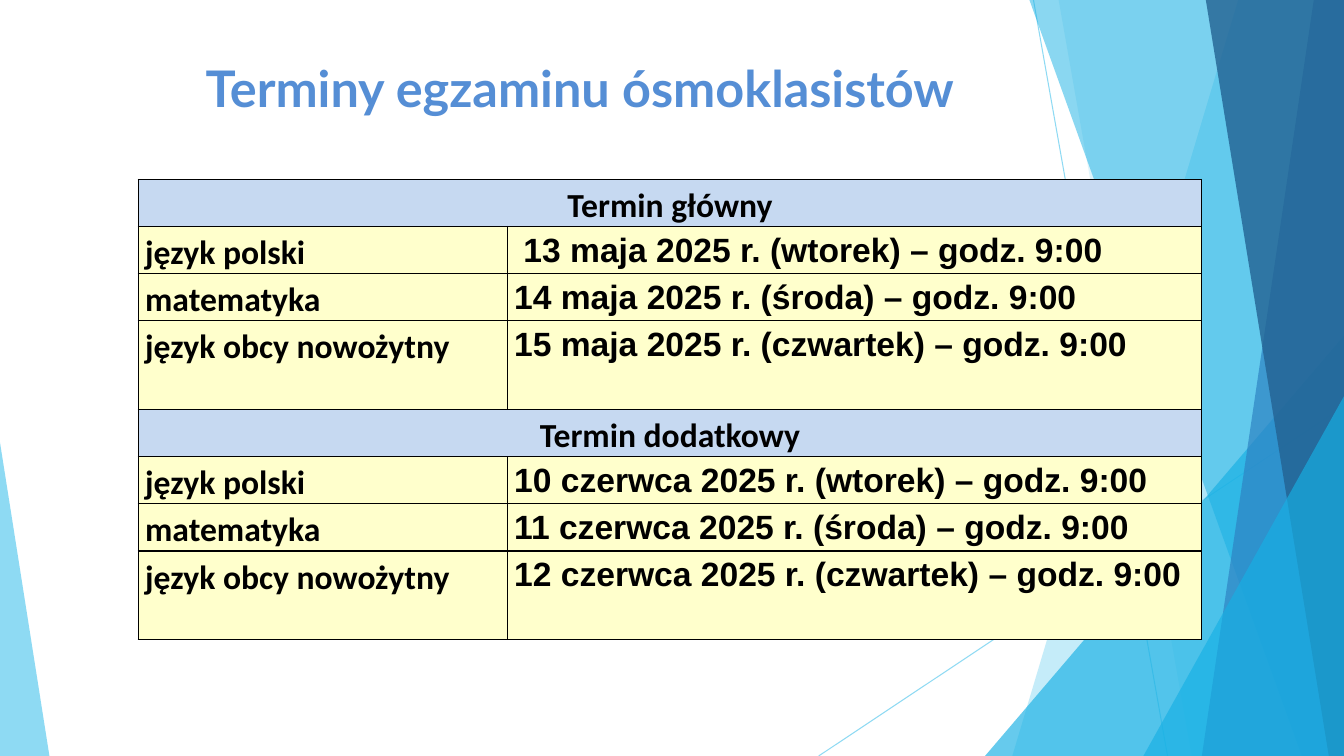
import lxml.etree
import pptx
import pptx.dml.color
import pptx.enum.shapes
import pptx.enum.text
import pptx.oxml
import pptx.oxml.ns
import pptx.util

Inches = pptx.util.Inches
Pt = pptx.util.Pt
qn = pptx.oxml.ns.qn
ALIGN = pptx.enum.text.PP_ALIGN
WIDTH, HEIGHT = 13.33, 7.5
SKY, AZURE, BLUE, NAVY = "5FCBEF", "17B0E4", "2E83C3", "236292"


def colour(hex_code):
    return pptx.dml.color.RGBColor.from_string(hex_code)


class ExamSlide:
    """Holds the style and the current slide, and draws each kind of element."""

    title_font, subject_font, date_font = "Lato", "Calibri", "Arial"
    title_colour, heading_fill, row_fill, ink = "558ED5", "C6D9F1", "FFFFCC", "000000"

    def __init__(self, deck):
        self.slide = deck.slides.add_slide(deck.slide_layouts[5])
        self.shapes = self.slide.shapes

    def fade(self, properties, percent):
        shade = next(properties.iter(qn("a:srgbClr")))
        lxml.etree.SubElement(shade, qn("a:alpha"), val=str(percent * 1000))

    def ray(self, start, end):
        ray = self.shapes.add_connector(
            pptx.enum.shapes.MSO_CONNECTOR.STRAIGHT, *map(Inches, start + end))
        ray.line.color.rgb = colour(SKY)
        ray.line.width = Pt(0.75)
        properties = ray._element.spPr
        self.fade(properties, 70)
        lxml.etree.SubElement(properties, qn("a:effectLst"))

    def facet(self, corners, fill, opacity):
        points = [(Inches(x), Inches(y)) for x, y in corners]
        outline = self.shapes.build_freeform(*points[0])
        outline.add_line_segments(points[1:], close=True)
        facet = outline.convert_to_shape()
        facet.shadow.inherit = False
        facet.fill.solid()
        facet.fill.fore_color.rgb = colour(fill)
        self.fade(facet._element.spPr, opacity)
        facet.line.fill.background()

    def title(self, wording, left, top, width, height):
        title = self.shapes.title
        title.left, title.top, title.width, title.height = map(Inches, (left, top, width, height))
        frame = title.text_frame
        frame.text = wording
        frame.word_wrap = True
        frame.auto_size = pptx.enum.text.MSO_AUTO_SIZE.NONE
        frame.vertical_anchor = pptx.enum.text.MSO_ANCHOR.TOP
        self.style(frame.paragraphs[0], self.title_font, 36, self.title_colour, ALIGN.LEFT)
        title._element.getparent().append(title._element)

    def style(self, paragraph, font, size, ink, align):
        paragraph.alignment = align
        paragraph.font.name = font
        paragraph.font.size = Pt(size)
        paragraph.font.bold = True
        paragraph.font.color.rgb = colour(ink)

    def cell(self, cell, wording, font, fill, align=ALIGN.LEFT):
        cell.text = wording
        cell.margin_left = cell.margin_right = Inches(0.07)
        cell.margin_top = cell.margin_bottom = 0
        cell.fill.solid()
        cell.fill.fore_color.rgb = colour(fill)
        paragraph = cell.text_frame.paragraphs[0]
        paragraph.line_spacing = 1.15
        self.style(paragraph, font, 24, self.ink, align)
        properties = cell._tc.get_or_add_tcPr()
        for place, side in enumerate(("lnL", "lnR", "lnT", "lnB")):
            border = lxml.etree.Element(qn(f"a:{side}"), w=str(Pt(1)))
            solid = lxml.etree.SubElement(border, qn("a:solidFill"))
            lxml.etree.SubElement(solid, qn("a:srgbClr"), val=self.ink)
            properties.insert(place, border)

    def timetable(self, sessions, left, top, widths):
        lines = [line for heading, exams in sessions for line in [(heading, "")] + exams]
        heights = [height for _, exams in sessions
                   for height in [0.46] * len(exams) + [0.88]]
        table = self.shapes.add_table(
            len(lines), len(widths), Inches(left), Inches(top),
            Inches(sum(widths)), Inches(sum(heights))).table
        for column, width in zip(table.columns, widths):
            column.width = Inches(width)
        for index, (subject, date) in enumerate(lines):
            table.rows[index].height = Inches(heights[index])
            subject_cell, date_cell = table.rows[index].cells
            if date:
                self.cell(subject_cell, subject, self.subject_font, self.row_fill)
                self.cell(date_cell, date, self.date_font, self.row_fill)
            else:
                subject_cell.merge(date_cell)
                self.cell(date_cell, "", self.subject_font, self.heading_fill)
                self.cell(subject_cell, subject, self.subject_font, self.heading_fill, ALIGN.CENTER)


def main():
    deck = pptx.Presentation()
    deck.slide_width, deck.slide_height = Inches(WIDTH), Inches(HEIGHT)
    exam = ExamSlide(deck)

    exam.ray((10.25, 0), (11.58, HEIGHT))
    exam.ray((WIDTH, 4.03), (8.12, HEIGHT))
    right_facets = [
        (12.28, 0, 10.04, SKY, 36),
        (10.5, 0, 11.82, SKY, 20),
        (WIDTH, 3.33, 9.77, AZURE, 66),
        (10.21, 0, 12.91, AZURE, 50),
        (13.03, 0, 11.92, BLUE, 70),
        (11.96, 0, 13.18, NAVY, 80),
        (WIDTH, 3.93, 11.34, AZURE, 66),
    ]
    for upper, top, lower, fill, opacity in right_facets:
        corners = [(upper, top), (WIDTH, top), (WIDTH, HEIGHT), (lower, HEIGHT)]
        exam.facet(list(dict.fromkeys(corners)), fill, opacity)
    exam.facet([(0, HEIGHT), (0, 4.39), (0.49, HEIGHT)], SKY, 70)

    exam.title("Terminy egzaminu ósmoklasistów", 1.94, 0.52, 9.4, 1.44)
    exam.timetable([
        ("Termin główny", [
            ("język polski", " 13 maja 2025 r. (wtorek) – godz. 9:00"),
            ("matematyka", "14 maja 2025 r. (środa) – godz. 9:00"),
            ("język obcy nowożytny", "15 maja 2025 r. (czwartek) – godz. 9:00"),
        ]),
        ("Termin dodatkowy", [
            ("język polski", "10 czerwca 2025 r. (wtorek) – godz. 9:00"),
            ("matematyka", "11 czerwca 2025 r. (środa) – godz. 9:00"),
            ("język obcy nowożytny", "12 czerwca 2025 r. (czwartek) – godz. 9:00"),
        ]),
    ], 1.37, 1.78, (3.66, 6.89))
    deck.save("out.pptx")


if __name__ == "__main__":
    main()
